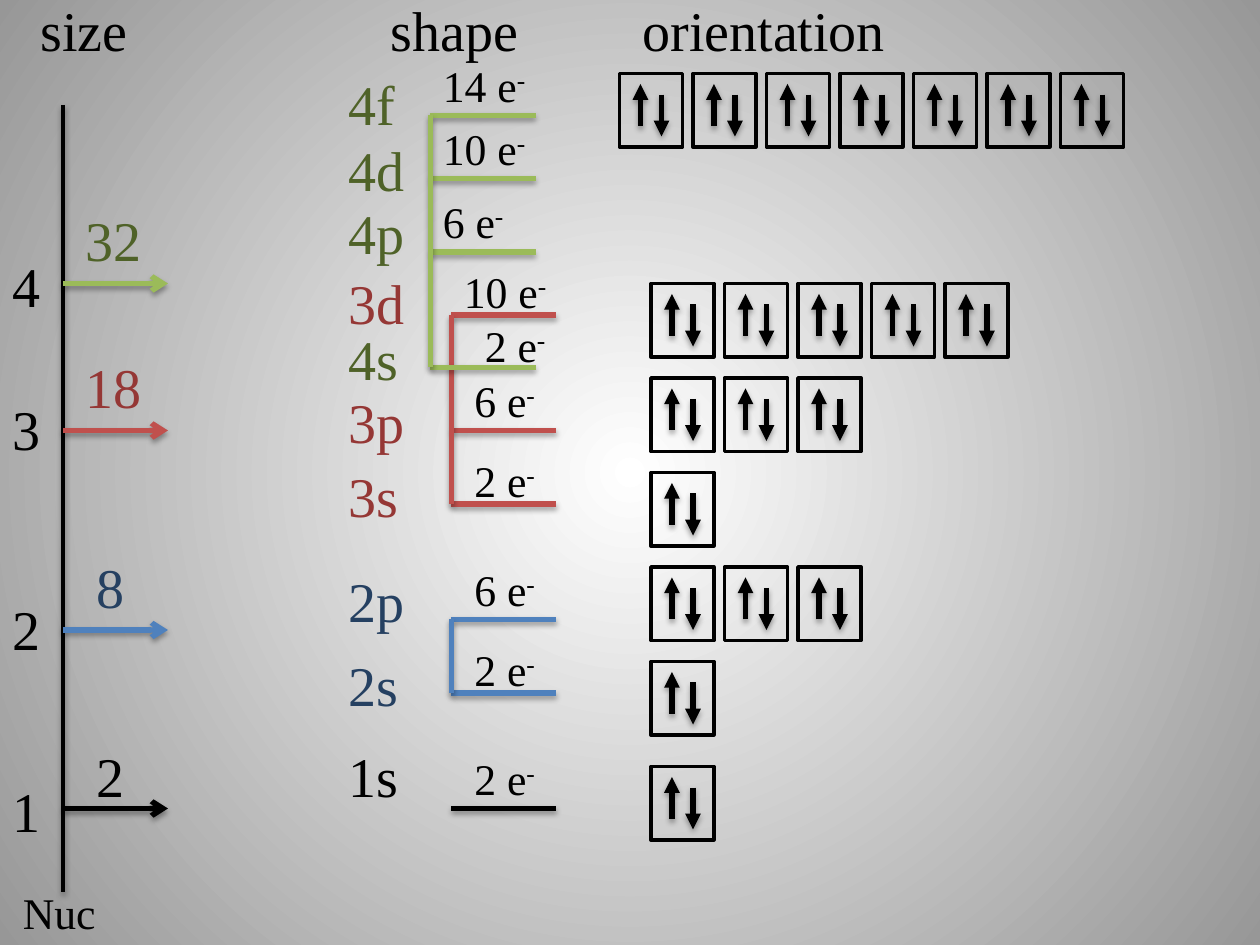
from dataclasses import dataclass

from lxml import etree
from pptx import Presentation
from pptx import util as u
from pptx.dml.color import RGBColor
from pptx.enum import shapes, text
from pptx.oxml import ns

FONT = "Times New Roman"
BIG, SMALL = 32, 25
BOX_HEIGHT = {BIG: 46, SMALL: 37.4}
COLORS = {
    "black": "000000", "center": "FFFFFF", "edge": "979797",
    "blue": "4F81BD", "dark blue": "254061",
    "red": "C0504D", "dark red": "953735",
    "green": "9BBB59", "dark green": "4F6228",
}
AXIS_X = 36
LEVEL_LENGTH = 60
ORBITAL_WIDTH, ORBITAL_HEIGHT, ORBITAL_PITCH = 36, 42, 42


@dataclass
class Subshell:
    name: str
    name_top: float
    level_y: float
    electrons: int
    count_left: float
    count_top: float
    orbitals: int = 0
    orbitals_left: float = 0
    orbitals_top: float = 0


@dataclass
class Shell:
    number: int
    number_top: float
    arrow_y: float
    capacity: int
    capacity_left: float
    capacity_top: float
    line_color: str
    text_color: str
    stem_x: float
    subshells: list[Subshell]


SHELLS = [
    Shell(1, 440, 462, 2, 48, 420, "black", "black", 258, [
        Subshell("1s", 420, 462, 2, 264, 426, 1, 372, 438),
    ]),
    Shell(2, 336, 360, 8, 48, 312, "blue", "dark blue", 258, [
        Subshell("2s", 368, 396, 2, 264, 364, 1, 372, 378),
        Subshell("2p", 320, 354, 6, 264, 318, 3, 372, 324),
    ]),
    Shell(3, 222, 246, 18, 42, 198, "red", "dark red", 258, [
        Subshell("3s", 260, 288, 2, 264, 256, 1, 372, 270),
        Subshell("3p", 218, 246, 6, 264, 210, 3, 372, 216),
        Subshell("3d", 150, 180, 10, 258, 148, 5, 372, 162),
    ]),
    Shell(4, 140, 162, 32, 42, 114, "green", "dark green", 246, [
        Subshell("4s", 182, 210, 2, 270, 178.6),
        Subshell("4p", 110, 144, 6, 246, 108),
        Subshell("4d", 74, 102, 10, 246, 66),
        Subshell("4f", 36, 66, 14, 246, 30, 7, 354, 42),
    ]),
]


def rgb(name: str) -> RGBColor:
    return RGBColor.from_string(COLORS[name])


def add_child(parent, tag: str, **attributes):
    return etree.SubElement(parent, ns.qn(tag), attributes)


def add_background(slide) -> None:
    """Fill the slide with a gradient that spreads from its centre."""
    fill = slide.background.fill
    fill.gradient()
    for stop, name in zip(fill.gradient_stops, ("center", "edge")):
        stop.color.rgb = rgb(name)
    gradient = slide.element.find(".//" + ns.qn("a:gradFill"))
    gradient.remove(gradient.find(ns.qn("a:lin")))
    circle = add_child(gradient, "a:path", path="circle")
    add_child(circle, "a:fillToRect", l="50000", t="50000", r="50000", b="50000")


def add_label(slide, words: str, left: float, top: float, width: float,
              size: int = BIG, color: str = "black", superscript: str = ""):
    label = slide.shapes.add_textbox(
        u.Pt(left), u.Pt(top), u.Pt(width), u.Pt(BOX_HEIGHT[size]))
    frame = label.text_frame
    frame.word_wrap = True
    frame.auto_size = text.MSO_AUTO_SIZE.SHAPE_TO_FIT_TEXT
    for part in filter(None, (words, superscript)):
        run = frame.paragraphs[0].add_run()
        run.text = part
        run.font.name, run.font.size = FONT, u.Pt(size)
        run.font.color.rgb = rgb(color)
        if part is superscript:
            run._r.get_or_add_rPr().set("baseline", "30000")
    return frame


def add_headings(slide) -> None:
    frame = add_label(slide, "size\tshape\torientation", 0, -6, 720)
    frame.margin_left = u.Pt(23.2)
    tabs = add_child(frame.paragraphs[0]._p.get_or_add_pPr(), "a:tabLst")
    for stop in (200, 344):
        add_child(tabs, "a:tab", pos=str(u.Pt(stop)), algn="l")


def add_line(slide, x1: float, y1: float, x2: float, y2: float, color: str = "black",
             weight: float = 3, head: str = "", shade: int = 35, drop: float = 1.8) -> None:
    """Draw a line with a soft shadow of shade percent, drop points below it."""
    line = slide.shapes.add_connector(
        shapes.MSO_CONNECTOR.STRAIGHT, u.Pt(x1), u.Pt(y1), u.Pt(x2), u.Pt(y2))
    line.line.width = u.Pt(weight)
    line.line.color.rgb = rgb(color)
    properties = line._element.spPr
    if head:
        add_child(properties.find(ns.qn("a:ln")), "a:tailEnd", type=head)
    effects = add_child(properties, "a:effectLst")
    shadow = add_child(effects, "a:outerShdw", blurRad=str(u.Pt(3.1)),
                       dist=str(u.Pt(drop)), dir="5400000", rotWithShape="0")
    shadow_color = add_child(shadow, "a:srgbClr", val=COLORS["black"])
    add_child(shadow_color, "a:alpha", val=str(shade * 1000))


def add_orbital(slide, left: float, top: float) -> None:
    """Draw a box that holds one spin-up and one spin-down electron."""
    orbital = slide.shapes.add_shape(
        shapes.MSO_SHAPE.RECTANGLE, u.Pt(left), u.Pt(top),
        u.Pt(ORBITAL_WIDTH), u.Pt(ORBITAL_HEIGHT))
    orbital.shadow.inherit = False
    orbital.fill.background()
    orbital.line.color.rgb = rgb("black")
    orbital.line.width = u.Pt(2)
    add_line(slide, left + 12, top + 30, left + 12, top + 6, head="triangle")
    add_line(slide, left + 24, top + 12, left + 24, top + 36, head="triangle")


def add_subshell(slide, subshell: Subshell, shell: Shell) -> None:
    add_label(slide, subshell.name, 192, subshell.name_top, 66, color=shell.text_color)
    add_line(slide, shell.stem_x, subshell.level_y,
             shell.stem_x + LEVEL_LENGTH, subshell.level_y, shell.line_color)
    add_label(slide, f"{subshell.electrons} e", subshell.count_left,
              subshell.count_top, 66, SMALL, superscript="-")
    for column in range(subshell.orbitals):
        add_orbital(slide, subshell.orbitals_left + column * ORBITAL_PITCH,
                    subshell.orbitals_top)


def add_shell(slide, shell: Shell) -> None:
    add_label(slide, str(shell.number), 0, shell.number_top, 36)
    add_line(slide, AXIS_X, shell.arrow_y, AXIS_X + 60, shell.arrow_y,
             shell.line_color, head="arrow")
    add_label(slide, str(shell.capacity), shell.capacity_left, shell.capacity_top,
              2 * (66 - shell.capacity_left), color=shell.text_color)
    for subshell in shell.subshells:
        add_subshell(slide, subshell, shell)
    if len(shell.subshells) > 1:
        add_line(slide, shell.stem_x, shell.subshells[0].level_y,
                 shell.stem_x, shell.subshells[-1].level_y, shell.line_color)


def main() -> None:
    deck = Presentation()
    deck.slide_width, deck.slide_height = u.Pt(720), u.Pt(540)
    slide = deck.slides.add_slide(deck.slide_layouts[6])
    add_background(slide)
    add_headings(slide)
    add_line(slide, AXIS_X, 60, AXIS_X, 510, weight=2, shade=38, drop=1.6)
    add_label(slide, "Nuc", 6, 502.6, 66, SMALL)
    for shell in SHELLS:
        add_shell(slide, shell)
    deck.save("out.pptx")


if __name__ == "__main__":
    main()
